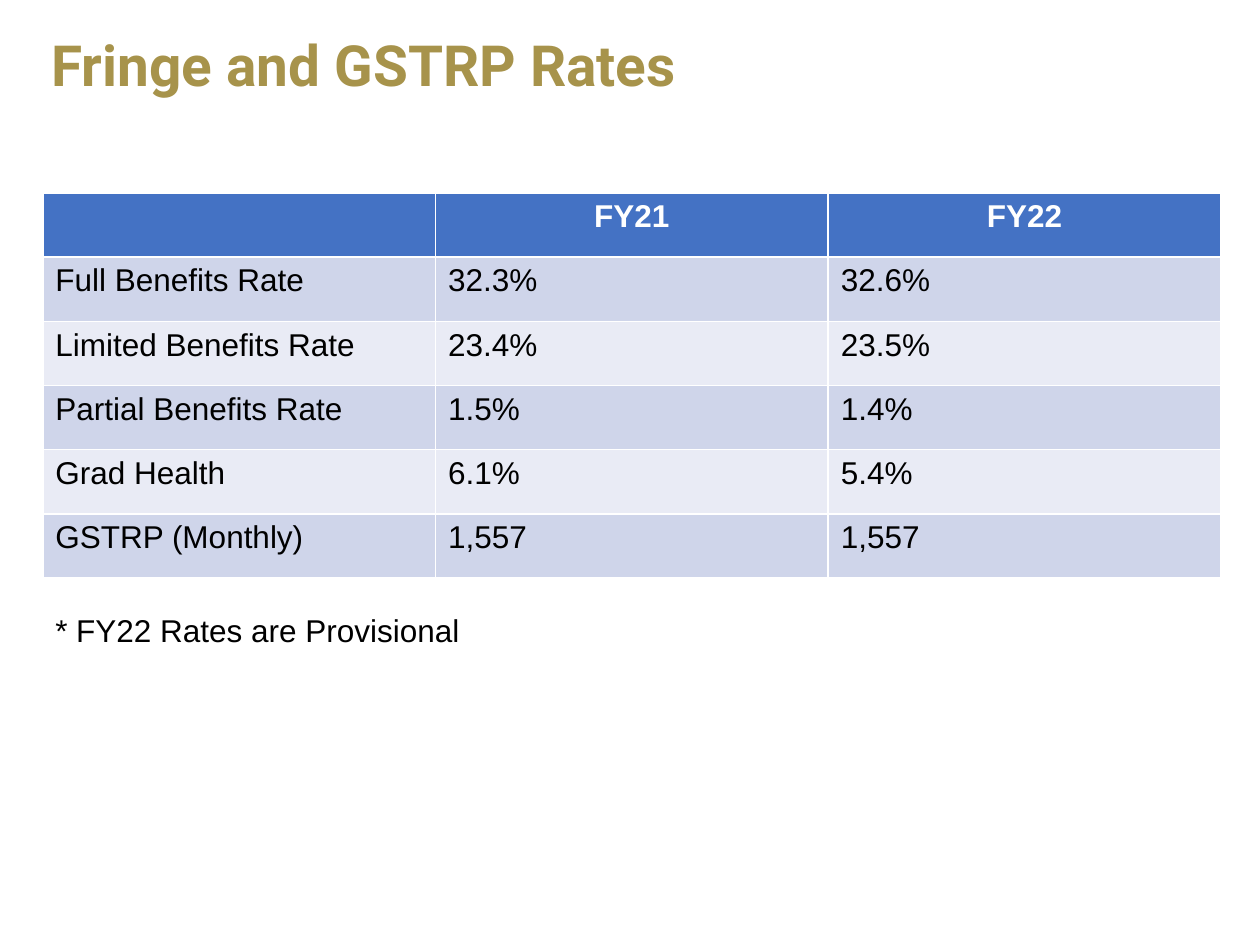
from pptx import Presentation
from pptx import util as u
from pptx.dml.color import RGBColor
from pptx.enum import text

# Content
TITLE = "Fringe and GSTRP Rates"
RATES = [
    ("", "FY21", "FY22"),
    ("Full Benefits Rate", "32.3%", "32.6%"),
    ("Limited Benefits Rate", "23.4%", "23.5%"),
    ("Partial Benefits Rate", "1.5%", "1.4%"),
    ("Grad Health", "6.1%", "5.4%"),
    ("GSTRP (Monthly)", "1,557", "1,557"),
]
NOTE = "* FY22 Rates are Provisional"

# Look
GOLD, BLUE, WHITE, BLACK = "A7934B", "4472C4", "FFFFFF", "000000"
BANDS = ["E9EBF5", "CFD5EA"]
LEFT, WIDTH, ROW = 0.34, 9.35, 0.51


def box(*sides):
    return [u.Inches(side) for side in sides]


def color(code):
    return RGBColor.from_string(code)


def style(par, size, ink, bold=False, face="Arial"):
    for run in par.runs:
        font = run.font
        font.name, font.size, font.bold = face, u.Pt(size), bold
        font.color.rgb = color(ink)


deck = Presentation()
deck.slide_width, deck.slide_height = box(10, 7.5)
slide = deck.slides.add_slide(deck.slide_layouts[5])

# Title
title = slide.shapes.title
title.left, title.top, title.width, title.height = box(0.31, 0.22, 9.38, 1.11)
frame = title.text_frame
frame.text = TITLE
frame.word_wrap = True
frame.auto_size = text.MSO_AUTO_SIZE.NONE
frame.vertical_anchor = text.MSO_ANCHOR.TOP
frame.margin_top = u.Inches(0.08)
head = frame.paragraphs[0]
head.alignment = text.PP_ALIGN.LEFT
head.line_spacing = 0.9
style(head, 32.4, GOLD, True, "Roboto")

# Rate table: the default table style draws the white rules
rows, cols = len(RATES), len(RATES[0])
table = slide.shapes.add_table(
    rows, cols, *box(LEFT, 1.53, WIDTH, rows * ROW)).table
for r, row in enumerate(RATES):
    top = r == 0
    for c, word in enumerate(row):
        cell = table.cell(r, c)
        cell.text = word
        cell.fill.solid()
        cell.fill.fore_color.rgb = color(BLUE if top else BANDS[r % 2])
        par = cell.text_frame.paragraphs[0]
        par.alignment = text.PP_ALIGN.CENTER if top else text.PP_ALIGN.LEFT
        style(par, 18, WHITE if top else BLACK, top)

# Footnote
note = slide.shapes.add_textbox(*box(LEFT, 4.8, 4.08, 0.42)).text_frame
note.text = NOTE
note.word_wrap = True
note.auto_size = text.MSO_AUTO_SIZE.SHAPE_TO_FIT_TEXT
style(note.paragraphs[0], 18, BLACK)

deck.save("out.pptx")
